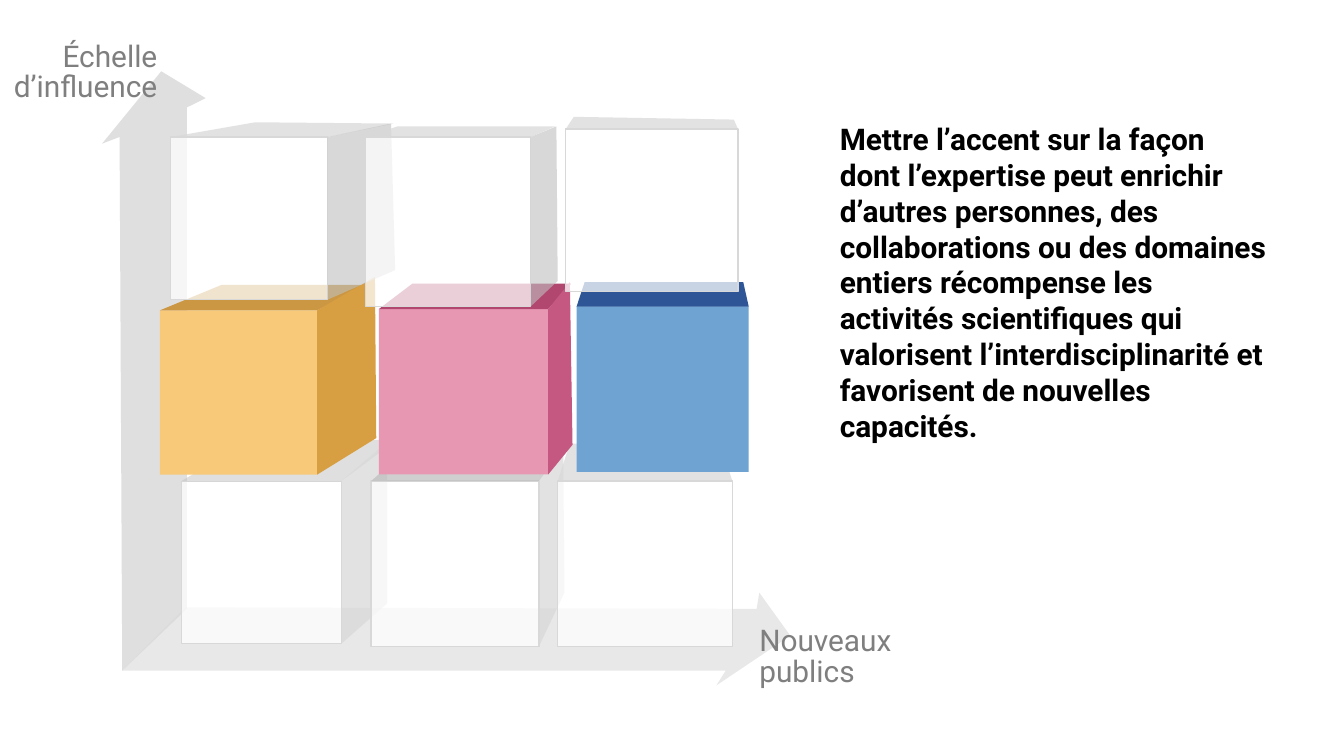
from dataclasses import dataclass

from lxml import etree
from pptx import Presentation
from pptx.dml.color import RGBColor
from pptx.enum.shapes import MSO_SHAPE
from pptx.enum.text import MSO_ANCHOR, MSO_AUTO_SIZE, PP_ALIGN
from pptx.oxml.ns import qn
from pptx.util import Pt


@dataclass(frozen=True)
class Theme:
    font: str = "Roboto"
    size: int = 16
    text: str = "000000"
    label: str = "7F7F7F"
    outline: str = "D8D8D8"
    # Fills are (colour, opacity in percent)
    upward: tuple = ("D9D9D9", 84)
    rightward: tuple = ("D9D9D9", 60)
    glass: tuple = ("FFFFFF", 74)
    pale: tuple = ("D9D9D9", 75)
    dark: tuple = ("BFBFBF", 75)
    faint: tuple = ("BFBFBF", 49)
    shade: tuple = ("BFBFBF", 60)
    yellow: tuple = ("F7C979", 100)
    yellow_top: tuple = ("CC9742", 100)
    yellow_side: tuple = ("D89F42", 100)
    pink: tuple = ("E897B3", 100)
    pink_top: tuple = ("B1466F", 100)
    pink_side: tuple = ("C45881", 100)
    blue: tuple = ("6EA3D2", 100)
    blue_top: tuple = ("2E5696", 100)


theme = Theme()


def add_face(shapes, outline, paint):
    """Draw a rectangle from (left, top, width, height), or a polygon from a list of points."""
    if isinstance(outline, tuple):
        face = shapes.add_shape(MSO_SHAPE.RECTANGLE, *map(Pt, outline))
    else:
        points = [(Pt(x), Pt(y)) for x, y in outline]
        builder = shapes.build_freeform(*points[0])
        builder.add_line_segments(points[1:])
        face = builder.convert_to_shape()
    colour, opacity = paint
    face.shadow.inherit = False
    face.fill.solid()
    face.fill.fore_color.rgb = RGBColor.from_string(colour)
    if opacity < 100:
        tint = face.element.spPr.find(qn("a:solidFill"))[0]
        etree.SubElement(tint, qn("a:alpha"), val=str(opacity * 1000))
    if paint == theme.glass:
        face.line.color.rgb = RGBColor.from_string(theme.outline)
        face.line.width = Pt(0.75)
    else:
        face.line.fill.background()


def write(box, place, text, colour, bold=False, align=PP_ALIGN.LEFT):
    box.left, box.top, box.width, box.height = map(Pt, place)
    frame = box.text_frame
    frame.word_wrap = True
    frame.auto_size = MSO_AUTO_SIZE.NONE
    frame.vertical_anchor = MSO_ANCHOR.TOP
    frame.text = text
    para = frame.paragraphs[0]
    para.alignment = align
    para.font.name = theme.font
    para.font.size = Pt(theme.size)
    para.font.bold = bold
    para.font.color.rgb = RGBColor.from_string(colour)
    return para


deck = Presentation()
deck.slide_width, deck.slide_height = Pt(720), Pt(405)
page = deck.slides.add_slide(deck.slide_layouts.get_by_name("Title Only"))

# Axis arrows, which meet at the corner
corner = (65.5, 359.3)
arrows = page.shapes.add_group_shape().shapes
add_face(arrows, [(54.7, 77), (86.4, 38.2), (110.2, 52.6), (100.1, 57.6),
                  (100.1, 326.2), corner, (64.1, 73.4)], theme.upward)
add_face(arrows, [(383.8, 367.2), (423.4, 340.6), (406.8, 317.5), (405.4, 326.2),
                  (99.4, 325.4), corner, (388.8, 359.3)], theme.rightward)

# Cubes from back to front: the front face, the rear edge of the top (right, left),
# the rear edge of the side (bottom, top; None if hidden), and the paint of each face
cubes = [
    # Bottom row
    ((97.2, 257.8, 85.7, 87.1), [(213.1, 235.4), (131, 237.6)],
     [(207.4, 323.3), (207.4, 236.9)], (theme.glass, theme.faint, theme.pale)),
    ((198.7, 257.8, 90, 88.6), [(303.1, 239), (220.3, 239)],
     [(302.4, 317.5), (301.7, 237.6)], (theme.glass, theme.dark, theme.pale)),
    ((298.8, 257.8, 93.6, 88.6), [(385.9, 237.6), (305.3, 237.6)],
     None, (theme.glass, theme.pale)),
    # Middle row
    ((85.7, 166.3, 84.2, 88), [(197.3, 152.6), (118.8, 152.6)],
     [(201.6, 234.7), (200.9, 148.3)], (theme.yellow, theme.yellow_top, theme.yellow_side)),
    ((203, 165.6, 90.7, 88.6), [(306, 151.9), (221, 151.9)],
     [(306.7, 238.3), (305.3, 151.2)], (theme.pink, theme.pink_top, theme.pink_side)),
    ((308.9, 164.2, 92.2, 88.6), [(398.2, 151.2), (313.2, 151.2)],
     None, (theme.blue, theme.blue_top)),
    # Top row
    ((303.1, 69.1, 92.2, 87.1), [(393.1, 64.1), (307.4, 62.6)],
     None, (theme.glass, theme.pale)),
    ((91.4, 73.4, 84.2, 87.1), [(211, 66.2), (136.8, 65.5)],
     [(211.7, 144.7), (209.5, 66.2)], (theme.glass, theme.pale, theme.shade)),
    ((195.8, 73.4, 88.6, 90.7), [(297.4, 67.7), (213.1, 67.7)],
     [(298.8, 150.5), (298.1, 67.7)], (theme.glass, theme.pale, theme.shade)),
]
for front, top_rear, side_rear, paints in cubes:
    left, top, width, height = front
    right, bottom = left + width, top + height
    outlines = [front, [(left, top), (right, top), *top_rear]]
    if side_rear:
        outlines.append([(right, top), (right, bottom), *side_rear])
    cube = page.shapes.add_group_shape()
    for outline, paint in zip(outlines, paints):
        add_face(cube.shapes, outline, paint)

# Message
message_box = page.shapes.add_textbox(0, 0, 0, 0)
write(message_box, (442.8, 61.2, 243.4, 293.8),
      "Mettre l’accent sur la façon dont l’expertise peut enrichir d’autres personnes, "
      "des collaborations ou des domaines entiers récompense les activités scientifiques "
      "qui valorisent l’interdisciplinarité et favorisent de nouvelles capacités.",
      theme.text, bold=True)

# Axis labels; the title placeholder is brought in front of the arrow
title = page.shapes.title
title.element.getparent().append(title.element)
scale_box = page.shapes.add_textbox(0, 0, 0, 0)
labels = [
    write(title, (399.6, 332.6, 97.2, 40.3), "Nouveaux publics", theme.label),
    write(scale_box, (-5.8, 19.4, 97.2, 40.3), "Échelle d’influence", theme.label,
          align=PP_ALIGN.RIGHT),
]
for para in labels:
    para.line_spacing = 0.85
    para.space_after = Pt(6)

deck.save("out.pptx")
